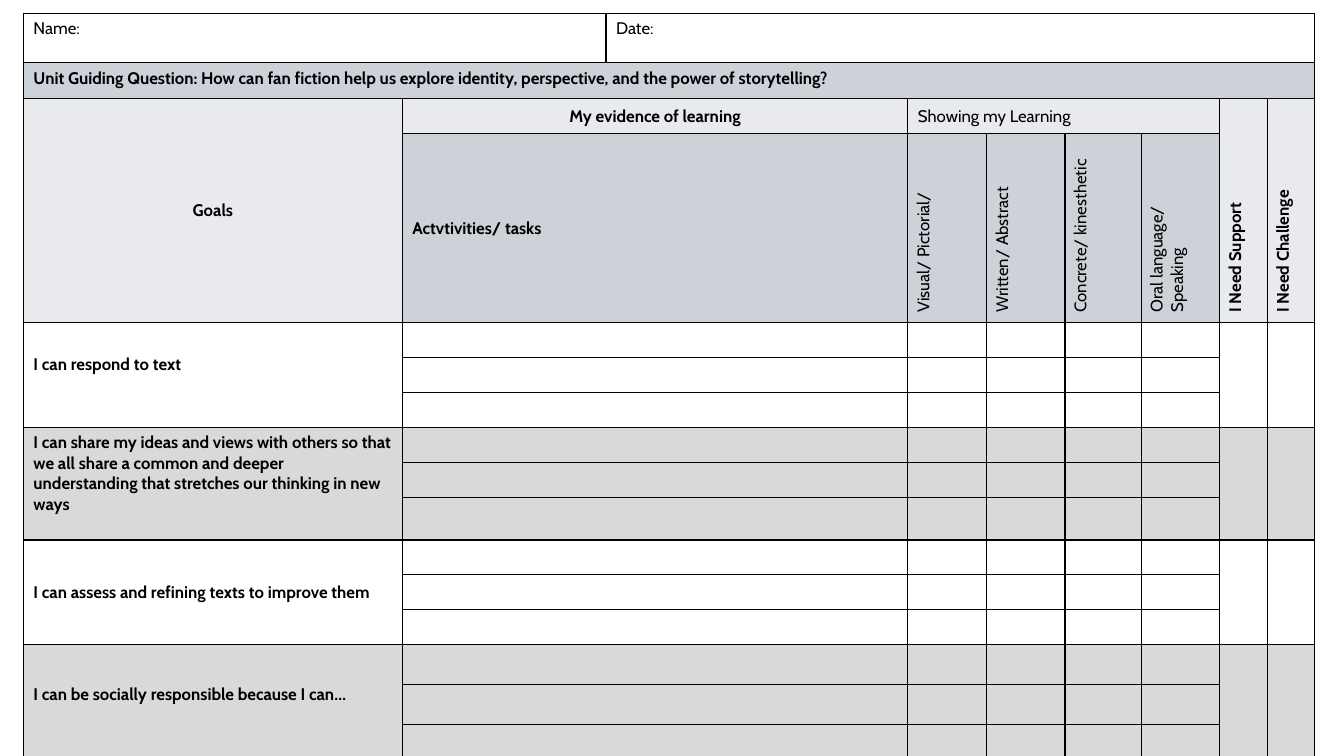
"""Build a one-slide learning tracker with goals, evidence and support columns."""
from lxml import etree
from pptx import Presentation
from pptx.dml.color import RGBColor
from pptx.enum.text import MSO_ANCHOR, PP_ALIGN
from pptx.oxml.ns import qn
from pptx.util import Cm, Pt

LEFT, MID = PP_ALIGN.LEFT, PP_ALIGN.CENTER
TOP, CENTER = MSO_ANCHOR.TOP, MSO_ANCHOR.MIDDLE
FONT, SIZE = "Cabin", Pt(12)
HEX = {
    "ink": "000000",
    "white": "FFFFFF",
    "grey": "D9D9D9",
    "pale": "E8EAED",
    "slate": "CCD2D8",
}


def style(cell, tint):
    """Give a cell its fill, black borders and text size."""
    props = cell._tc.get_or_add_tcPr()
    for side in ("a:lnL", "a:lnR", "a:lnT", "a:lnB"):
        line = etree.SubElement(props, qn(side), w=str(Pt(1)))
        paint = etree.SubElement(line, qn("a:solidFill"))
        etree.SubElement(paint, qn("a:srgbClr"), val=HEX["ink"])
    cell.fill.solid()
    cell.fill.fore_color.rgb = RGBColor.from_string(HEX[tint])
    para = cell.text_frame.paragraphs[0]._p
    etree.SubElement(para, qn("a:endParaRPr"), sz=str(int(SIZE.pt * 100)))


def write(cell, text, bold=True, anchor=CENTER, align=LEFT, turn=False):
    """Write one run of text in a cell."""
    cell.vertical_anchor = anchor
    if turn:
        cell._tc.get_or_add_tcPr().set("vert", "vert270")
    para = cell.text_frame.paragraphs[0]
    para.alignment = align
    run = para.add_run()
    run.text = text
    run.font.name = FONT
    run.font.size = SIZE
    run.font.bold = bold
    run.font.color.rgb = RGBColor.from_string(HEX["ink"])


deck = Presentation()
deck.slide_width, deck.slide_height = Cm(33.87), Cm(19.05)
slide = deck.slides.add_slide(deck.slide_layouts[6])

widths = [9.55, 5.13, 7.61, 1.99, 1.97, 1.92, 1.98, 1.2, 1.19]
heights = [1.25, 0.91, 0.88, 4.76] + [0.88] * 9 + [1.01] * 3
frame = slide.shapes.add_table(
    len(heights), len(widths), Cm(0.59), Cm(0.33), Cm(sum(widths)), Cm(sum(heights))
)
table = frame.table
table.first_row = False
table.horz_banding = False
for col, width in zip(table.columns, widths):
    col.width = Cm(width)
for row, height in zip(table.rows, heights):
    row.height = Cm(height)

tints = ["white", "slate", "pale", "slate"]
tints += (["white"] * 3 + ["grey"] * 3) * 2
for y, tint in enumerate(tints):
    for x in range(len(widths)):
        head = y == 3 and x in (0, 7, 8)
        style(table.cell(y, x), "pale" if head else tint)

spans = [(0, 0, 0, 1), (0, 2, 0, 8), (1, 0, 1, 8), (2, 3, 2, 6)]
spans += [(y, 1, y, 2) for y in range(2, len(heights))]
starts = range(4, len(heights), 3)
for x in (0, 7, 8):
    spans.append((2, x, 3, x))
    spans += [(y, x, y + 2, x) for y in starts]
for y, x, end, last in spans:
    table.cell(y, x).merge(table.cell(end, last))

write(table.cell(0, 0), "Name:", bold=False, anchor=TOP)
write(table.cell(0, 2), "Date:", bold=False, anchor=TOP)
write(
    table.cell(1, 0),
    "Unit Guiding Question: How can fan fiction help us explore identity, "
    "perspective, and the power of storytelling?",
    anchor=TOP,
)
write(table.cell(2, 0), "Goals", align=MID)
write(table.cell(2, 1), "My evidence of learning", align=MID)
write(table.cell(2, 3), "Showing my Learning", bold=False)
write(table.cell(3, 1), "Actvtivities/ tasks")

modes = [
    "Visual/ Pictorial/",
    "Written/ Abstract",
    "Concrete/ kinesthetic",
    "Oral language/ Speaking",
]
for x, mode in enumerate(modes, 3):
    write(table.cell(3, x), mode, bold=False, turn=True)
for x, need in enumerate(["I Need Support", "I Need Challenge"], 7):
    write(table.cell(2, x), need, turn=True)

goals = [
    ("I can respond to text", 0.64),
    (
        "I can share my ideas and views with others so that we all share a common "
        "and deeper understanding that stretches our thinking in new ways",
        0.64,
    ),
    ("I can assess and refining texts to improve them", 0.13),
    ("I can be socially responsible because I can…", 0.64),
]
for y, (goal, gap) in zip(starts, goals):
    cell = table.cell(y, 0)
    cell.margin_bottom = Cm(gap)
    write(cell, goal)

deck.save("out.pptx")
